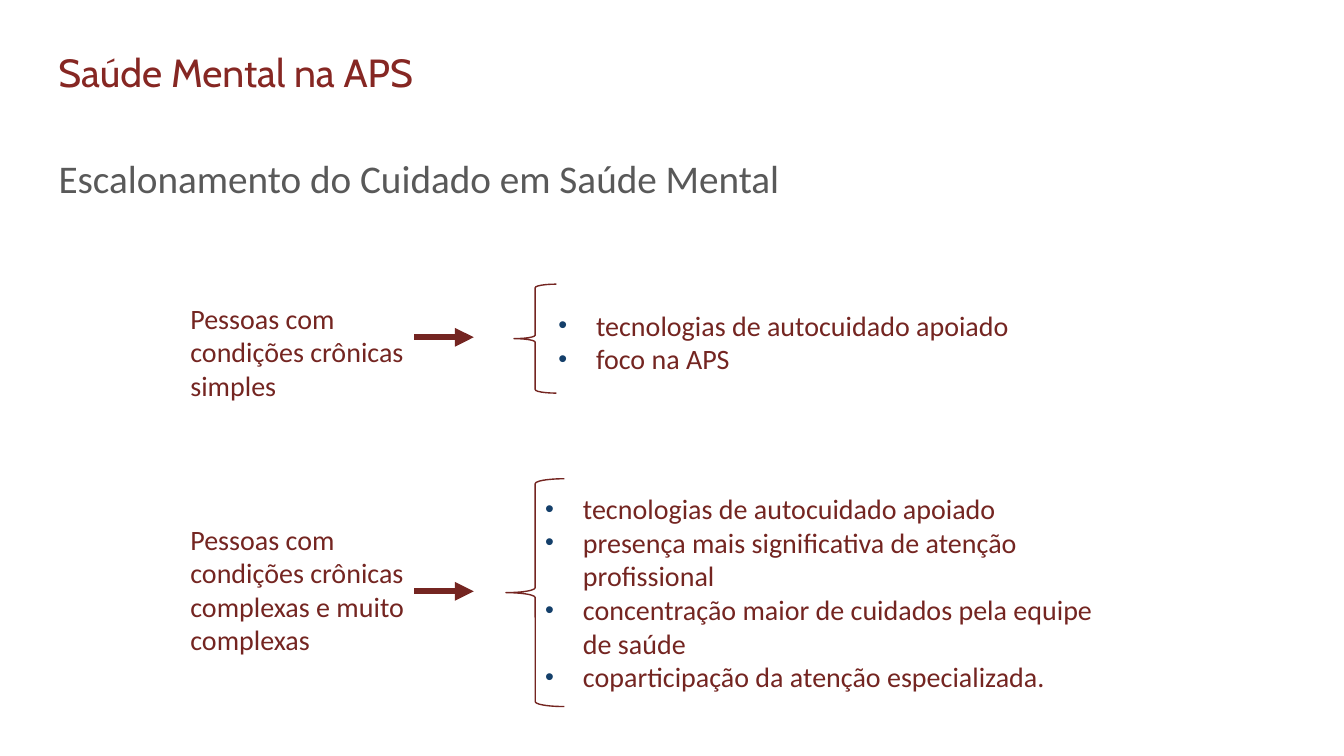
import pptx
import pptx.util
import pptx.oxml
import pptx.oxml.ns
import pptx.dml.color
import pptx.enum.shapes
import pptx.enum.text

Pt = pptx.util.Pt
ALIGN = pptx.enum.text.PP_ALIGN
ANCHOR = pptx.enum.text.MSO_ANCHOR
COLORS = {"head": "862723", "title": "595959", "body": "742521", "dot": "143F6A"}


def rgb(name):
    return pptx.dml.color.RGBColor.from_string(COLORS[name])


def add_tag(parent, tag, **attrs):
    node = pptx.oxml.parse_xml(f"<a:{tag} {pptx.oxml.ns.nsdecls('a')}/>")
    for key, value in attrs.items():
        node.set(key, value)
    parent.append(node)
    return node


def add_run(para, text, color="body", size=20, face="Calibri"):
    run = para.add_run()
    run.text = text
    run.font.size = Pt(size)
    run.font.name = face
    run.font.color.rgb = rgb(color)


def add_frame(slide, left, top, width, height):
    box = slide.shapes.add_textbox(Pt(left), Pt(top), Pt(width), Pt(height))
    box.text_frame.word_wrap = True
    return box.text_frame


def add_dot(para):
    props = para._p.get_or_add_pPr()
    props.set("marL", str(Pt(27)))
    props.set("indent", str(-Pt(27)))
    add_tag(add_tag(props, "buClr"), "srgbClr", val=COLORS["dot"])
    add_tag(props, "buSzPct", val="90000")
    add_tag(props, "buFont", typeface="Arial")
    add_tag(props, "buChar", char="•")


def add_head(slide, left, top, width):
    # Section name
    frame = add_frame(slide, left, top, 510, 41)
    add_run(frame.paragraphs[0], "Saúde Mental na APS", "head", 28, "Cabin")

    # Slide title
    title = slide.shapes.title
    title.left, title.top = Pt(left), Pt(top + 46)
    title.width, title.height = Pt(width), Pt(104.4)
    frame = title.text_frame
    frame.word_wrap = True
    frame.vertical_anchor = ANCHOR.MIDDLE
    para = frame.paragraphs[0]
    para.alignment = ALIGN.LEFT
    para.line_spacing = 0.9
    add_run(para, "Escalonamento do Cuidado em Saúde Mental", "title", 28)


def add_row(slide, left, top, height, case):
    mid = top + height / 2
    spine = left + 253.4

    # Group of people
    frame = add_frame(slide, left, top + case["drop"], 167, 102)
    add_run(frame.paragraphs[0], case["who"])

    # Arrow
    arrow = slide.shapes.add_connector(
        pptx.enum.shapes.MSO_CONNECTOR.STRAIGHT,
        Pt(left + 167), Pt(mid - 1), Pt(left + 209.5), Pt(mid - 1))
    arrow.line.color.rgb = rgb("body")
    arrow.line.width = Pt(4.5)
    add_tag(arrow.line._get_or_add_ln(), "tailEnd", type="triangle")
    add_tag(arrow._element.spPr, "effectLst")

    # Brace, centred on its spine
    wide = case["brace"]
    brace = slide.shapes.add_shape(
        pptx.enum.shapes.MSO_SHAPE.LEFT_BRACE,
        Pt(spine - wide / 2), Pt(top), Pt(wide), Pt(height))
    brace.shadow.inherit = False
    brace.fill.background()
    brace.line.color.rgb = rgb("body")
    brace.line.width = Pt(1)

    # Kinds of care
    frame = add_frame(slide, spine + case["shift"], top + case["gap"],
                      case["width"], height - case["gap"])
    for i, text in enumerate(case["care"]):
        para = frame.add_paragraph() if i else frame.paragraphs[0]
        add_dot(para)
        para.alignment = case["align"]
        add_run(para, text)


def main():
    deck = pptx.Presentation()
    deck.slide_width, deck.slide_height = Pt(960), Pt(540)
    slide = deck.slides.add_slide(deck.slide_layouts[5])
    add_head(slide, 34.6, 31, 791)

    simple = {
        "who": "Pessoas com condições crônicas simples",
        "care": ["tecnologias de autocuidado apoiado", "foco na APS"],
        "drop": 8.7, "brace": 30.2, "shift": 9.4, "gap": 13.7,
        "width": 392.4, "align": ALIGN.JUSTIFY,
    }
    severe = {
        "who": "Pessoas com condições crônicas complexas e muito complexas",
        "care": ["tecnologias de autocuidado apoiado",
                 "presença mais significativa de atenção profissional",
                 "concentração maior de cuidados pela equipe de saúde",
                 "coparticipação da atenção especializada."],
        "drop": 27.4, "brace": 41.8, "shift": 0, "gap": 5.7,
        "width": 428.4, "align": ALIGN.LEFT,
    }
    add_row(slide, 128.9, 203, 77.8, simple)
    add_row(slide, 128.9, 342, 162.7, severe)
    deck.save("out.pptx")


if __name__ == "__main__":
    main()
